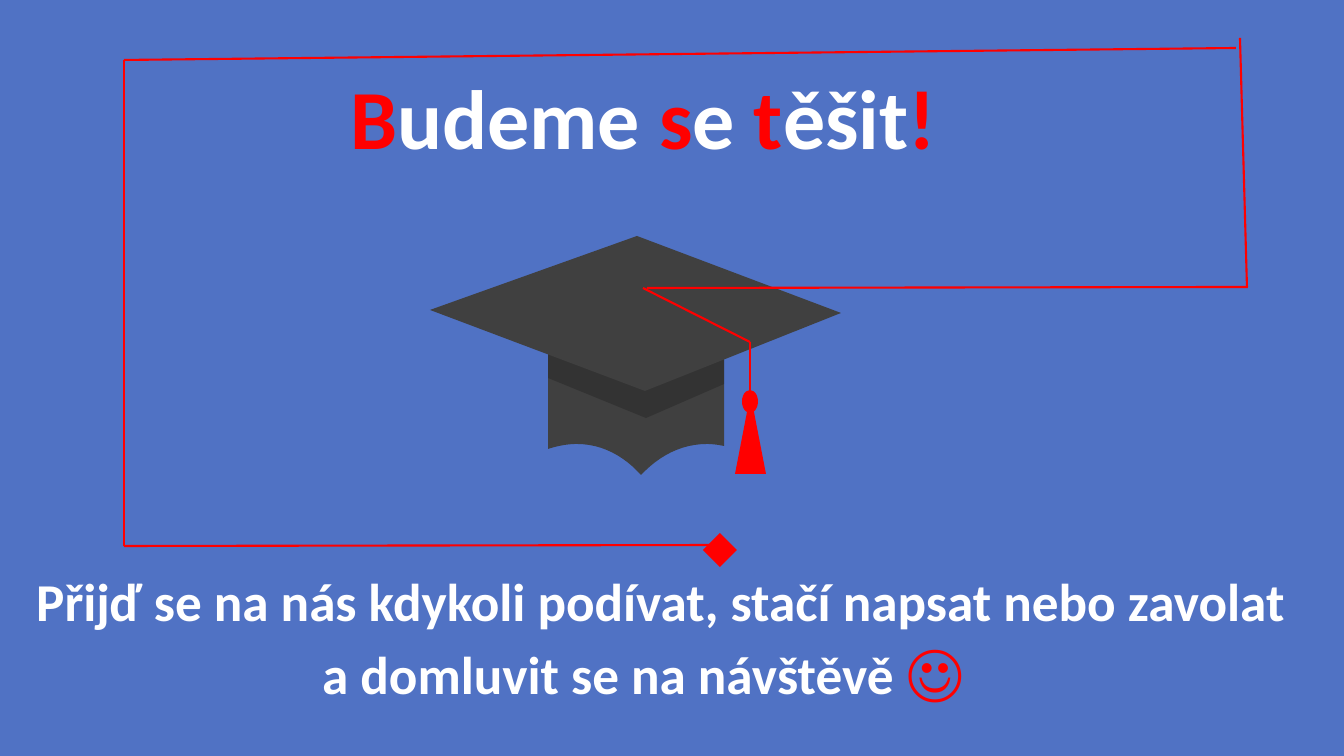
import lxml.etree
import pptx
import pptx.dml.color
import pptx.enum.shapes
import pptx.enum.text
import pptx.oxml.ns
import pptx.util

PRESET = pptx.enum.shapes.MSO_SHAPE
SCALE = 12192000 / 1344  # EMU in one px
BLUE, RED, WHITE, CHARCOAL, BLACK = "5072C4", "FF0000", "FFFFFF", "404040", "000000"


def px(length):
    return pptx.util.Emu(round(length * SCALE))


def color(value):
    return pptx.dml.color.RGBColor.from_string(value)


def add_span(para, text, size=38, fill=WHITE, bold=True, font="Calibri"):
    span = para.add_run()
    span.text = text
    span.font.name = font
    span.font.size = pptx.util.Pt(size)
    span.font.bold = bold
    span.font.color.rgb = color(fill)


def curve(start, first, second, end, steps=12):
    """Points along a cubic Bezier curve, without its start."""
    points = []
    for step in range(1, steps + 1):
        t = step / steps
        weights = ((1 - t) ** 3, 3 * t * (1 - t) ** 2, 3 * t * t * (1 - t), t ** 3)
        points.append(tuple(sum(weight * point[axis] for weight, point
                                in zip(weights, (start, first, second, end)))
                            for axis in (0, 1)))
    return points


class Canvas:
    def __init__(self, page):
        self.page = page
        self.shapes = page.shapes
        self.line_width = pptx.util.Pt(1.5)

    def background(self, fill):
        self.page.background.fill.solid()
        self.page.background.fill.fore_color.rgb = color(fill)

    def paint(self, shape, fill, opacity=100):
        shape.shadow.inherit = False
        shape.fill.solid()
        shape.fill.fore_color.rgb = color(fill)
        shape.line.fill.background()
        if opacity < 100:
            tint = shape.fill._xPr.find(".//" + pptx.oxml.ns.qn("a:srgbClr"))
            alpha = lxml.etree.SubElement(tint, pptx.oxml.ns.qn("a:alpha"))
            alpha.set("val", str(opacity * 1000))

    def preset(self, kind, left, top, width, height, fill=RED):
        shape = self.shapes.add_shape(kind, px(left), px(top), px(width), px(height))
        self.paint(shape, fill)

    def outline(self, points, fill, opacity=100):
        corners = [(px(x), px(y)) for x, y in points]
        builder = self.shapes.build_freeform(*corners[0])
        builder.add_line_segments(corners[1:], close=True)
        self.paint(builder.convert_to_shape(), fill, opacity)

    def line(self, start, end, fill=RED):
        line = self.shapes.add_connector(
            pptx.enum.shapes.MSO_CONNECTOR.STRAIGHT, *map(px, start + end))
        line.line.color.rgb = color(fill)
        line.line.width = self.line_width
        lxml.etree.SubElement(line._element.spPr, pptx.oxml.ns.qn("a:effectLst"))

    def text(self, left, top, width, height, paragraphs):
        """Each paragraph is a left indent and a list of (text, format)."""
        frame = self.shapes.add_textbox(px(left), px(top), px(width), px(height)).text_frame
        frame.word_wrap = True
        frame.margin_left = frame.margin_right = frame.margin_top = frame.margin_bottom = 0
        for index, (indent, spans) in enumerate(paragraphs):
            para = frame.add_paragraph() if index else frame.paragraphs[0]
            para.alignment = pptx.enum.text.PP_ALIGN.CENTER
            if indent:
                para._p.get_or_add_pPr().set("marL", str(px(indent)))
            for text, style in spans:
                add_span(para, text, **style)


def draw_cap(canvas):
    canvas.shapes = canvas.page.shapes.add_group_shape().shapes
    # Cap body with two arcs along the bottom
    right, middle, left = (707, 444), (641, 475), (577, 444)
    body = [(548, 299), (724, 299), (724, 446)]
    body += curve(body[-1], (719, 445), (713, 444), right)
    body += curve(right, (681, 444), (659, 456), middle)
    body += curve(middle, (624, 456), (602, 444), left)
    body += curve(left, (567, 444), (557, 446), (548, 449))
    canvas.outline(body, CHARCOAL)
    # Shade under the board, then the board
    canvas.outline([(548, 334), (724, 334), (724, 384), (646, 418), (548, 378)], BLACK, 20)
    canvas.outline([(637, 236), (430, 310), (645, 391), (841, 313)], CHARCOAL)
    # Tassel
    canvas.line((643, 288), (750, 342))
    canvas.line((750, 342), (750, 429))
    canvas.preset(PRESET.ISOSCELES_TRIANGLE, 735, 394, 31, 80)
    canvas.preset(PRESET.OVAL, 742, 390, 16, 23)
    canvas.shapes = canvas.page.shapes


def main():
    deck = pptx.Presentation()
    deck.slide_width, deck.slide_height = px(1344), px(756)
    canvas = Canvas(deck.slides.add_slide(deck.slide_layouts[6]))
    canvas.background(BLUE)

    # Headline with red accents, and the invitation
    accents = [("B", RED), ("udeme ", WHITE), ("s", RED), ("e ", WHITE),
               ("t", RED), ("ěšit", WHITE), ("!", RED)]
    headline = [(text, {"size": 60, "fill": fill}) for text, fill in accents]
    canvas.text(-29, 65, 1344, 103, [(0, headline)])
    canvas.text(-29, 568, 1344, 142, [
        (36, [("Přijď se na nás kdykoli podívat, stačí napsat nebo zavolat", {})]),
        (0, [("a domluvit se na návštěvě ", {}), ("☺", {"size": 45, "fill": RED})]),
    ])

    draw_cap(canvas)

    # Red thread from the cap around the headline
    for start, end in [((1248, 287), (647, 288)), ((1240, 38), (1247, 287)),
                       ((1236, 48), (124, 60)), ((124, 60), (124, 546)),
                       ((724, 545), (124, 546))]:
        canvas.line(start, end)
    canvas.preset(PRESET.DIAMOND, 703, 533, 34, 34)

    deck.save("out.pptx")


if __name__ == "__main__":
    main()
